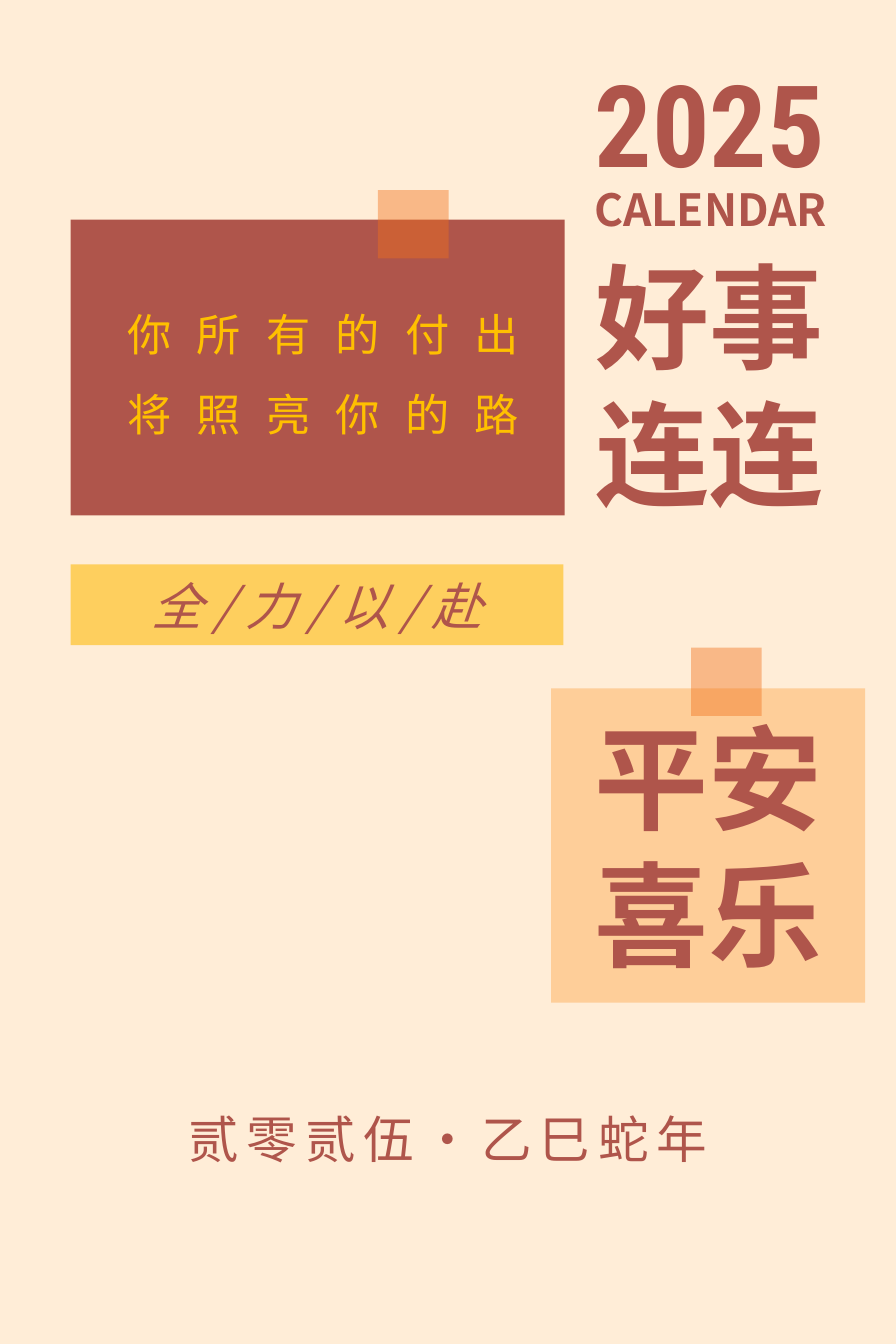
"""Build the 2025 calendar cover with its greetings and taped paper notes."""
import pptx
import pptx.dml.color
import pptx.enum.shapes
import pptx.enum.text
import pptx.oxml.ns
import pptx.oxml.xmlchemy
import pptx.util

Inches = pptx.util.Inches
RGBColor = pptx.dml.color.RGBColor
CREAM = RGBColor(0xFF, 0xED, 0xD7)
BRICK = RGBColor(0xAF, 0x55, 0x4B)
GOLD = RGBColor(0xFF, 0xC0, 0x00)
YELLOW = RGBColor(0xFE, 0xCF, 0x5E)
PEACH = RGBColor(0xFE, 0xCE, 0x99)
ORANGE = RGBColor(0xF2, 0x70, 0x19)
SANS = "Noto Sans CJK SC"
CONDENSED = "Roboto Condensed"


def add_panel(box, color, opacity=100):
    panel = cover.shapes.add_shape(
        pptx.enum.shapes.MSO_SHAPE.RECTANGLE, *map(Inches, box))
    panel.shadow.inherit = False
    panel.line.fill.background()
    panel.fill.solid()
    panel.fill.fore_color.rgb = color
    if opacity < 100:
        tint = panel._element.spPr.find(".//" + pptx.oxml.ns.qn("a:srgbClr"))
        alpha = pptx.oxml.xmlchemy.OxmlElement("a:alpha")
        alpha.set("val", str(opacity * 1000))
        tint.append(alpha)
    return panel


def write_lines(holder, lines, style, color=BRICK, tracking=0, line_spacing=None):
    frame = holder.text_frame
    frame.word_wrap = True
    frame.auto_size = pptx.enum.text.MSO_AUTO_SIZE.SHAPE_TO_FIT_TEXT
    frame.text = "\n".join(lines)
    for paragraph in frame.paragraphs:
        paragraph.alignment = pptx.enum.text.PP_ALIGN.CENTER
        paragraph.line_spacing = line_spacing
        font = paragraph.runs[0].font
        font.color.rgb = color
        for attribute, value in style.items():
            setattr(font, attribute, value)
        east_asian = pptx.oxml.xmlchemy.OxmlElement("a:ea")
        east_asian.set("typeface", style["name"])
        font._element.append(east_asian)
        if tracking:
            font._element.set("spc", str(tracking * 100))


presentation = pptx.Presentation()
presentation.slide_width = Inches(7.87)
presentation.slide_height = Inches(11.81)
cover = presentation.slides.add_slide(presentation.slide_layouts[6])
cover.background.fill.solid()
cover.background.fill.fore_color.rgb = CREAM

headline = {"name": SANS, "size": pptx.util.Pt(72), "bold": True}
year = {**headline, "name": CONDENSED}
subtitle = {**headline, "size": pptx.util.Pt(28)}
verse = {"name": SANS, "size": pptx.util.Pt(28)}
lunar_year = {"name": SANS, "size": pptx.util.Pt(32)}
motto = {**lunar_year, "italic": True}

add_panel((0.62, 1.93, 4.34, 2.6), BRICK)
add_panel((4.84, 6.05, 2.76, 2.76), PEACH)
for tape_left, tape_top in ((3.32, 1.67), (6.07, 5.69)):
    add_panel((tape_left, tape_top, 0.62, 0.6), ORANGE, opacity=42)
motto_band = add_panel((0.62, 4.96, 4.33, 0.71), YELLOW)
motto_band.text_frame.vertical_anchor = pptx.enum.text.MSO_ANCHOR.MIDDLE
write_lines(motto_band, ["全 / 力 / 以 / 赴"], motto)

captions = [
    ((4.85, 0.42, 2.77, 1.31), ["2025"], year, {}),
    ((3.83, 1.55, 4.82, 0.57), ["CALENDAR"], subtitle, {}),
    ((4.85, 2.12, 2.77, 2.52), ["好事", "连连"], headline, {}),
    ((0.67, 2.42, 4.34, 1.43), ["你所有的付出", "将照亮你的路"], verse,
     {"color": GOLD, "tracking": 16, "line_spacing": 1.5}),
    ((4.84, 6.17, 2.77, 2.52), ["平安喜乐"], headline, {}),
    ((1.27, 9.69, 5.33, 0.64), ["贰零贰伍·乙巳蛇年"], lunar_year, {"tracking": 5}),
]
for box, lines, style, extras in captions:
    write_lines(cover.shapes.add_textbox(*map(Inches, box)), lines, style, **extras)

presentation.save("out.pptx")
